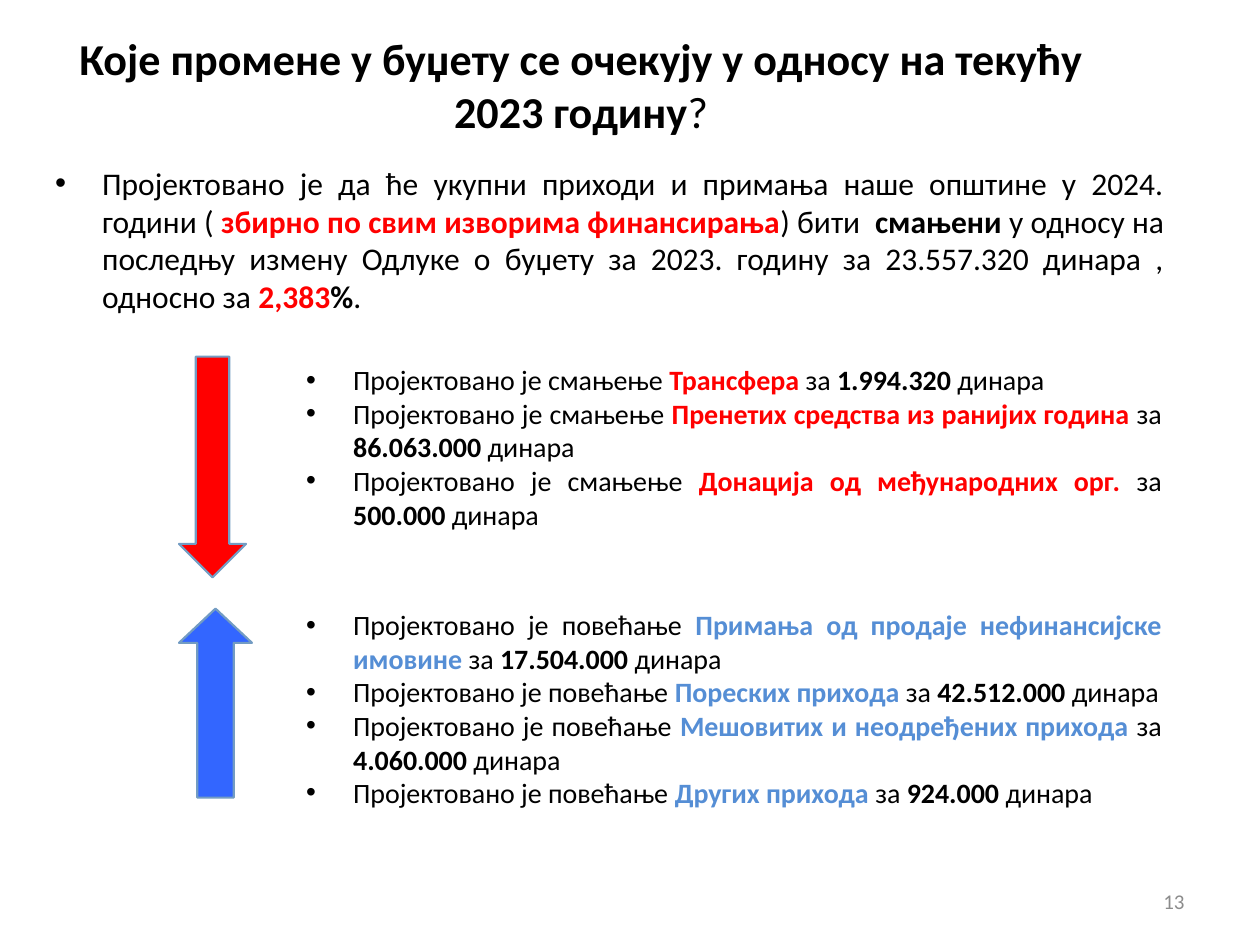
from lxml import etree
from pptx import Presentation
from pptx.dml.color import RGBColor
from pptx.enum import shapes, text
from pptx.oxml.ns import qn
from pptx.util import Cm, Pt

BLACK = RGBColor(0x00, 0x00, 0x00)
RED = RGBColor(0xFF, 0x00, 0x00)
BLUE = RGBColor(0x33, 0x66, 0xFF)
LIGHT_BLUE = RGBColor(0x55, 0x8E, 0xD5)
OUTLINE = RGBColor(0x73, 0x9C, 0xC3)
GREY = RGBColor(0x8C, 0x8C, 0x8C)

INDENT = Cm(0.95)
DECREASES = [
    ("Трансфера", " за ", "1.994.320 "),
    ("Пренетих средства из ранијих година ", "за ", "86.063.000 "),
    ("Донација од међународних орг. ", "за ", "500.000 "),
]
INCREASES = [
    ("Примања од продаје нефинансијске имовине", " за ", "17.504.000 "),
    ("Пореских прихода ", "за ", "42.512.000 "),
    ("Мешовитих и неодређених прихода ", "за ", "4.060.000 "),
    ("Других прихода ", "за ", "924.000 "),
]


def add_frame(page, box, anchor=text.MSO_ANCHOR.TOP):
    frame = page.shapes.add_textbox(*map(Cm, box)).text_frame
    frame.word_wrap = True
    frame.vertical_anchor = anchor
    return frame


def add_spans(para, spans, size, alignment):
    para.alignment = alignment
    for wording, color, bold in spans:
        span = para.add_run()
        span.text = wording
        span.font.name = "Calibri"
        span.font.size = Pt(size)
        span.font.bold = bold
        span.font.color.rgb = color


def add_bullet(para, spans, size, space_before=0):
    add_spans(para, spans, size, text.PP_ALIGN.JUSTIFY)
    para.space_before = Pt(space_before)
    properties = para._p.get_or_add_pPr()
    properties.set("marL", str(INDENT))
    properties.set("indent", str(-INDENT))
    etree.SubElement(properties, qn("a:buFont")).set("typeface", "Arial")
    etree.SubElement(properties, qn("a:buChar")).set("char", "•")


def add_title(page, box):
    frame = add_frame(page, box, text.MSO_ANCHOR.MIDDLE)
    add_spans(frame.paragraphs[0], [
        ("Које промене у буџету се очекују у односу на текућу 2023 годину", BLACK, True),
        ("?", BLACK, False),
    ], 25.2, text.PP_ALIGN.CENTER)


def add_summary(page, box):
    frame = add_frame(page, box)
    add_bullet(frame.paragraphs[0], [
        ("Пројектовано је да ће укупни приходи и примања наше општине у 2024. години ( ", BLACK, False),
        ("збирно по свим изворима финансирања", RED, True),
        (") бити  ", BLACK, False),
        ("смањени ", BLACK, True),
        ("у односу на последњу измену Одлуке о буџету за 2023. годину "
         "за 23.557.320 динара , односно за ", BLACK, False),
        ("2,383", RED, True),
        ("%", BLACK, True),
        (".", BLACK, False),
    ], 18, 3.6)


def add_changes(page, box):
    frame = add_frame(page, box)
    groups = [("смањење", RED, DECREASES, 0), ("повећање", LIGHT_BLUE, INCREASES, 44)]
    para = frame.paragraphs[0]
    for direction, color, items, group_gap in groups:
        for index, (source, joint, amount) in enumerate(items):
            if para.runs:
                para = frame.add_paragraph()
            add_bullet(para, [
                (f"Пројектовано је {direction} ", BLACK, False),
                (source, color, True),
                (joint, BLACK, False),
                (amount, BLACK, True),
                ("динара", BLACK, False),
            ], 16, group_gap if index == 0 else 0)


def add_arrow(page, box, kind, color, head):
    arrow = page.shapes.add_shape(kind, *map(Cm, box))
    arrow.shadow.inherit = False
    arrow.adjustments[0] = 0.5
    arrow.adjustments[1] = head
    arrow.fill.solid()
    arrow.fill.fore_color.rgb = color
    arrow.line.color.rgb = OUTLINE
    arrow.line.width = Pt(1.25)


def add_page_number(page, box):
    frame = add_frame(page, box, text.MSO_ANCHOR.MIDDLE)
    add_spans(frame.paragraphs[0], [("13", GREY, False)], 12, text.PP_ALIGN.RIGHT)


def main():
    deck = Presentation()
    deck.slide_width, deck.slide_height = Cm(25.4), Cm(19.05)
    page = deck.slides.add_slide(deck.slide_layouts[6])
    add_title(page, (0.64, 0.43, 22.15, 2.54))
    add_summary(page, (0.86, 3.18, 22.86, 2.97))
    add_changes(page, (5.92, 7.19, 17.75, 9.5))
    add_arrow(page, (3.61, 7.19, 1.35, 4.45), shapes.MSO_SHAPE.DOWN_ARROW, RED, 0.5)
    add_arrow(page, (3.61, 12.27, 1.47, 3.81), shapes.MSO_SHAPE.UP_ARROW, BLUE, 0.47)
    add_page_number(page, (18.21, 17.65, 5.92, 1.02))
    deck.save("out.pptx")


if __name__ == "__main__":
    main()
